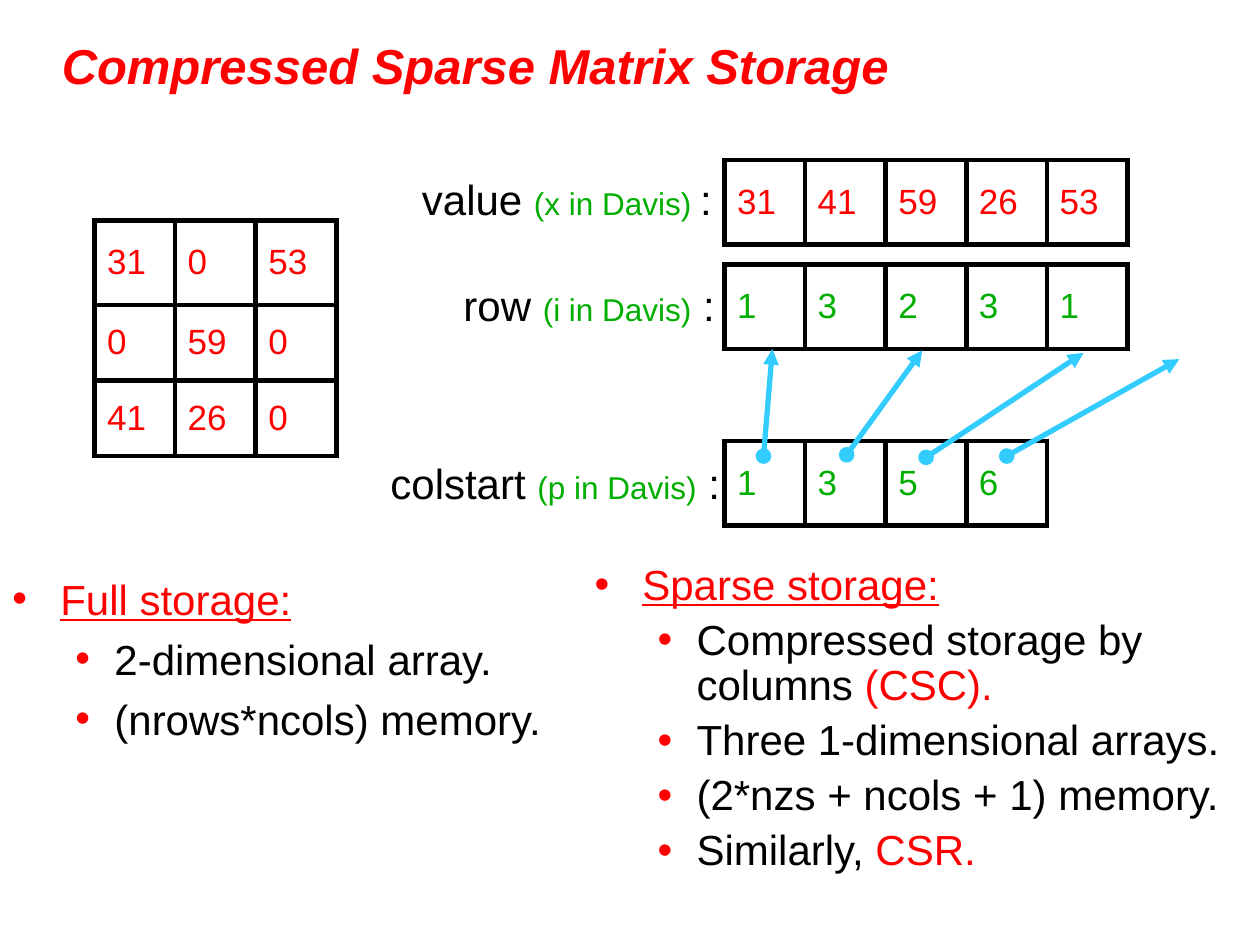
"""Build the slide on compressed sparse matrix storage."""
from lxml.etree import SubElement
from pptx import Presentation
from pptx.dml.color import RGBColor
from pptx.enum.shapes import MSO_CONNECTOR
from pptx.enum.text import MSO_ANCHOR, PP_ALIGN
from pptx.oxml.ns import qn
from pptx.util import Inches, Pt

RED, GREEN, BLACK, BLUE = "FF0000", "00AE00", "000000", "33CCFF"
TITLE = "Compressed Sparse Matrix Storage"
COLUMN_WIDTH, ROW_HEIGHT = 0.64, 0.67

TABLES = [
    (0.75, 1.75, RED, [0.67, 0.6, 0.6], [[31, 0, 53], [0, 59, 0], [41, 26, 0]]),
    (5.75, 1.27, RED, [ROW_HEIGHT], [[31, 41, 59, 26, 53]]),
    (5.75, 2.1, GREEN, [ROW_HEIGHT], [[1, 3, 2, 3, 1]]),
    (5.75, 3.5, GREEN, [ROW_HEIGHT], [[1, 3, 5, 6]]),
]
LABELS = [
    (3.25, 1.33, 2.61, "value ", "(x in Davis) ", ":"),
    (3.58, 2.17, 2.22, "row ", "(i in Davis)", " :"),
    (3, 3.58, 2.91, "colstart ", "(p in Davis)", " :"),
]
LISTS = [
    ((0, 4.5, 4.75, 2.42), 1, "Full storage:", [
        [("2-dimensional array.", BLACK)],
        [("(nrows*ncols) memory.", BLACK)],
    ]),
    ((4.62, 4.43, 5.25, 2.92), 0.9, "Sparse storage:", [
        [("Compressed storage by columns ", BLACK), ("(CSC).", RED)],
        [("Three 1-dimensional arrays.", BLACK)],
        [("(2*nzs + ncols + 1) memory.", BLACK)],
        [("Similarly, ", BLACK), ("CSR.", RED)],
    ]),
]
ARROWS = [
    (6.06, 3.62, 6.13, 2.77),
    (6.72, 3.61, 7.32, 2.78),
    (7.35, 3.63, 8.6, 2.8),
    (7.99, 3.62, 9.36, 2.85),
]


def color(value):
    return RGBColor.from_string(value)


def add_run(paragraph, text, size, fill, **formats):
    run = paragraph.add_run()
    run.text = text
    run.font.color.rgb = color(fill)
    for name, value in {"name": "Arial", "size": Pt(size), **formats}.items():
        setattr(run.font, name, value)


def add_title(slide):
    title = slide.shapes.title
    box = dict(left=0.39, top=0.18, width=9.33, height=0.67)
    for name, value in box.items():
        setattr(title, name, Inches(value))
    title.text_frame.vertical_anchor = MSO_ANCHOR.MIDDLE
    paragraph = title.text_frame.paragraphs[0]
    paragraph.alignment = PP_ALIGN.LEFT
    add_run(paragraph, TITLE, 28, RED, bold=True, italic=True)


def set_borders(cell):
    properties = cell._tc.get_or_add_tcPr()
    for position, side in enumerate(("lnL", "lnR", "lnT", "lnB")):
        border = properties.makeelement(qn(f"a:{side}"), {"w": str(Pt(3))})
        fill = SubElement(border, qn("a:solidFill"))
        SubElement(fill, qn("a:srgbClr"), val=BLACK)
        properties.insert(position, border)


def add_matrix(slide, left, top, fill, heights, values):
    columns = len(values[0])
    box = (left, top, columns * COLUMN_WIDTH, sum(heights))
    table = slide.shapes.add_table(len(values), columns, *map(Inches, box)).table
    table.first_row = table.horz_banding = False
    for column in table.columns:
        column.width = Inches(COLUMN_WIDTH)
    for row, height, numbers in zip(table.rows, heights, values):
        row.height = Inches(height)
        for cell, number in zip(row.cells, numbers):
            cell.fill.background()
            cell.vertical_anchor = MSO_ANCHOR.MIDDLE
            add_run(cell.text_frame.paragraphs[0], str(number), 20, fill)
            set_borders(cell)


def add_bullet(paragraph, level, line_spacing):
    formats = dict(level=level, line_spacing=line_spacing, space_before=Pt(5.5))
    for name, value in formats.items():
        setattr(paragraph, name, value)
    margin, indent = [(0.38, -0.38), (0.81, -0.31)][level]
    properties = paragraph._p.get_or_add_pPr()
    properties.set("marL", str(Inches(margin)))
    properties.set("indent", str(Inches(indent)))
    SubElement(SubElement(properties, qn("a:buClr")), qn("a:srgbClr"), val=RED)
    SubElement(properties, qn("a:buFont"), typeface="Arial")
    SubElement(properties, qn("a:buChar"), char="•")


def add_list(slide, box, line_spacing, heading, items):
    frame = slide.shapes.add_textbox(*map(Inches, box)).text_frame
    frame.word_wrap = True
    paragraph = frame.paragraphs[0]
    add_bullet(paragraph, 0, line_spacing)
    add_run(paragraph, heading, 24, RED, underline=True)
    for item in items:
        paragraph = frame.add_paragraph()
        add_bullet(paragraph, 1, line_spacing)
        for text, fill in item:
            add_run(paragraph, text, 24, fill)


def add_label(slide, left, top, width, name, note, colon):
    box = map(Inches, (left, top, width, 0.5))
    frame = slide.shapes.add_textbox(*box).text_frame
    frame.word_wrap = False
    paragraph = frame.paragraphs[0]
    for text, size, fill in ((name, 24, BLACK), (note, 18, GREEN), (colon, 24, BLACK)):
        add_run(paragraph, text, size, fill)


def add_arrow(slide, *ends):
    arrow = slide.shapes.add_connector(MSO_CONNECTOR.STRAIGHT, *map(Inches, ends))
    arrow.line.color.rgb = color(BLUE)
    arrow.line.width = Pt(3)
    line = arrow.line._get_or_add_ln()
    SubElement(line, qn("a:headEnd"), type="oval")
    SubElement(line, qn("a:tailEnd"), type="triangle")
    SubElement(arrow._element.spPr, qn("a:effectLst"))


def main():
    presentation = Presentation()
    presentation.slide_width, presentation.slide_height = Inches(10), Inches(7.5)
    slide = presentation.slides.add_slide(presentation.slide_layouts[5])
    add_title(slide)
    for add, entries in (
        (add_matrix, TABLES),
        (add_list, LISTS),
        (add_arrow, ARROWS),
        (add_label, LABELS),
    ):
        for entry in entries:
            add(slide, *entry)
    presentation.save("out.pptx")


if __name__ == "__main__":
    main()
